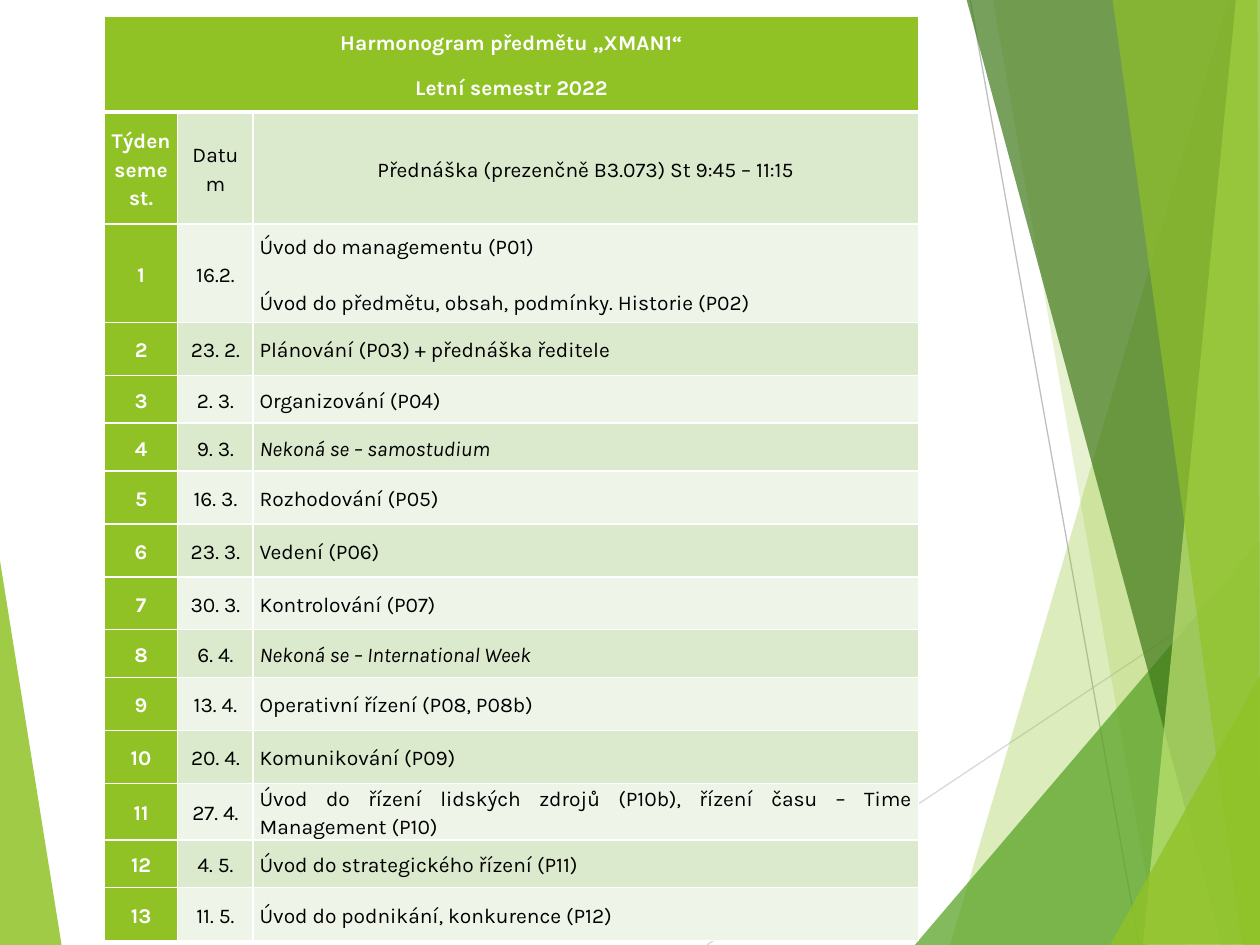
from lxml import etree
from pptx import Presentation, util as u
from pptx.dml.color import RGBColor
from pptx.enum import shapes, text
from pptx.oxml import ns

WIDTH, HEIGHT = u.Inches(10), u.Inches(7.5)
FONT, FONT_SIZE = "Karla", 12
GREEN, DARK_GREEN, DEEP_GREEN, PALE_GREEN = "90C226", "54A021", "3F7819", "C0E474"
BANDS = ("EEF4E8", "DBE9CD")
WHITE, BLACK = "FFFFFF", "000000"
CENTER, LEFT, JUSTIFY = (text.PP_ALIGN.CENTER, text.PP_ALIGN.LEFT,
                         text.PP_ALIGN.JUSTIFY)

# Facets: fill, opacity in percent, corners in percent of the slide's size
EDGE = 100.1
LEFT_FACET = (GREEN, 85, [(-0.1, 58.5), (4.9, 100.1), (-0.1, 100)])
RIGHT_FACETS = [
    (GREEN, 30, [(97.5, 0), (75.4, 100), (100.2, 100.1), (EDGE, 0.1)]),
    (GREEN, 20, [(78.8, -0.1), (91.9, 100), (EDGE, 100), (EDGE, -0.1)]),
    (DARK_GREEN, 72, [(72.6, 100), (100, 57.2), (EDGE, 100)]),
    (DEEP_GREEN, 70, [(76.7, -0.1), (97, 100), (EDGE, 99.9), (EDGE, -0.1)]),
    (PALE_GREEN, 70, [(98.1, -0.1), (90.7, 100), (EDGE, 100), (100, -0.1)]),
    (GREEN, 65, [(88.3, -0.1), (98.6, 100), (100, 100), (99.8, -0.1)]),
    (GREEN, 80, [(88.1, 100), (EDGE, 71.3), (EDGE, 99.9)]),
]
# Rays: colour, start, end
RAYS = [("D9D9D9", (56.1, 100), (EDGE, 60.9)),
        ("BFBFBF", (77, 0), (90.4, 100))]

# Timetable
TITLE = ["Harmonogram předmětu „XMAN1“", "Letní semestr 2022"]
HEADINGS = ["Týden semest.", "Datum",
            "Přednáška (prezenčně B3.073) St 9:45 – 11:15"]
COLUMNS = [0.58, 0.6, 5.28]
HEADER_ROWS = [0.76, 0.89]
# Row height, date, topics
WEEKS = [
    (0.78, "16.2.", ["Úvod do managementu (P01)",
                     "Úvod do předmětu, obsah, podmínky. Historie (P02)"]),
    (0.42, "23. 2.", ["Plánování (P03) + přednáška ředitele"]),
    (0.38, "2. 3.", ["Organizování (P04)"]),
    (0.38, "9. 3.", ["Nekoná se – samostudium"]),
    (0.42, "16. 3.", ["Rozhodování (P05)"]),
    (0.42, "23. 3.", ["Vedení (P06)"]),
    (0.42, "30. 3.", ["Kontrolování (P07)"]),
    (0.38, "6. 4.", ["Nekoná se – International Week"]),
    (0.42, "13. 4.", ["Operativní řízení (P08, P08b)"]),
    (0.42, "20. 4.", ["Komunikování (P09)"]),
    (0.44, "27. 4.", ["Úvod do řízení lidských zdrojů (P10b), "
                      "řízení času – Time Management (P10)"]),
    (0.38, "4. 5.", ["Úvod do strategického řízení (P11)"]),
    (0.42, "11. 5.", ["Úvod do podnikání, konkurence (P12)"]),
]
JUSTIFIED = {WEEKS[0][2][1], WEEKS[9][2][0], WEEKS[10][2][0]}


def color(hex_code):
    return RGBColor.from_string(hex_code)


def place(point):
    return round(WIDTH * point[0] / 100), round(HEIGHT * point[1] / 100)


def add_facet(slide, fill, opacity, corners):
    start, *others = map(place, corners)
    builder = slide.shapes.build_freeform(*start)
    builder.add_line_segments(others, close=True)
    shape = builder.convert_to_shape()
    shape.shadow.inherit = False
    shape.fill.solid()
    shape.fill.fore_color.rgb = color(fill)
    shape.line.fill.background()
    fill_color = shape._element.spPr.find(".//" + ns.qn("a:srgbClr"))
    etree.SubElement(fill_color, ns.qn("a:alpha"), val=str(opacity * 1000))


def add_ray(slide, line_color, start, end):
    connector = slide.shapes.add_connector(
        shapes.MSO_CONNECTOR.STRAIGHT, *place(start), *place(end))
    connector.line.color.rgb = color(line_color)
    connector.line.width = u.Pt(0.75)
    etree.SubElement(connector._element.spPr, ns.qn("a:effectLst"))


def set_borders(cell, bottom_width):
    properties = cell._tc.get_or_add_tcPr()
    widths = {"lnL": 1, "lnR": 1, "lnT": 1, "lnB": bottom_width}
    for index, (side, width) in enumerate(widths.items()):
        line = etree.Element(ns.qn("a:" + side), w=str(u.Pt(width)))
        fill = etree.SubElement(line, ns.qn("a:solidFill"))
        etree.SubElement(fill, ns.qn("a:srgbClr"), val=WHITE)
        properties.insert(index, line)


def fill_cell(cell, lines, fill, alignment=CENTER, bottom_width=1):
    cell.fill.solid()
    cell.fill.fore_color.rgb = color(fill)
    cell.vertical_anchor = text.MSO_ANCHOR.MIDDLE
    cell.margin_left = cell.margin_right = u.Inches(0.05)
    cell.margin_top = cell.margin_bottom = 0
    set_borders(cell, bottom_width)
    cell.text_frame.text = "\n".join(lines)
    for paragraph in cell.text_frame.paragraphs:
        justified = paragraph.text in JUSTIFIED
        paragraph.alignment = JUSTIFY if justified else alignment
        paragraph.line_spacing = 1.15
        paragraph.space_before = u.Pt(6 if justified else 0)
        paragraph.space_after = u.Pt(6 if justified else 10)
        font = paragraph.font
        font.name, font.size = FONT, u.Pt(FONT_SIZE)
        font.bold = fill == GREEN
        font.italic = paragraph.text.startswith("Nekoná se")
        font.color.rgb = color(WHITE if fill == GREEN else BLACK)


def add_timetable(slide):
    heights = HEADER_ROWS + [week[0] for week in WEEKS]
    table = slide.shapes.add_table(
        len(heights), len(COLUMNS), u.Inches(0.83), u.Inches(0.13),
        u.Inches(sum(COLUMNS)), u.Inches(sum(heights))).table
    for column, width in zip(table.columns, COLUMNS):
        column.width = u.Inches(width)
    for row, height in zip(table.rows, heights):
        row.height = u.Inches(height)

    # Title across all columns
    table.cell(0, 0).merge(table.cell(0, len(COLUMNS) - 1))
    for column in range(len(COLUMNS)):
        fill_cell(table.cell(0, column), [] if column else TITLE, GREEN,
                  bottom_width=3)

    # Headings and weeks, in alternating bands
    rows = [([[heading] for heading in HEADINGS], CENTER)]
    rows += [([[str(number)], [date], topics], LEFT)
             for number, (_, date, topics) in enumerate(WEEKS, 1)]
    for row, (contents, topic_alignment) in enumerate(rows, 1):
        fills = (GREEN, BANDS[row % 2], BANDS[row % 2])
        alignments = (CENTER, CENTER, topic_alignment)
        for column, lines in enumerate(contents):
            fill_cell(table.cell(row, column), lines, fills[column],
                      alignments[column])


def main():
    presentation = Presentation()
    presentation.slide_width, presentation.slide_height = WIDTH, HEIGHT
    slide = presentation.slides.add_slide(presentation.slide_layouts[6])

    # Background decoration
    add_facet(slide, *LEFT_FACET)
    for ray in RAYS:
        add_ray(slide, *ray)
    for facet in RIGHT_FACETS:
        add_facet(slide, *facet)

    add_timetable(slide)
    presentation.save("out.pptx")


if __name__ == "__main__":
    main()
